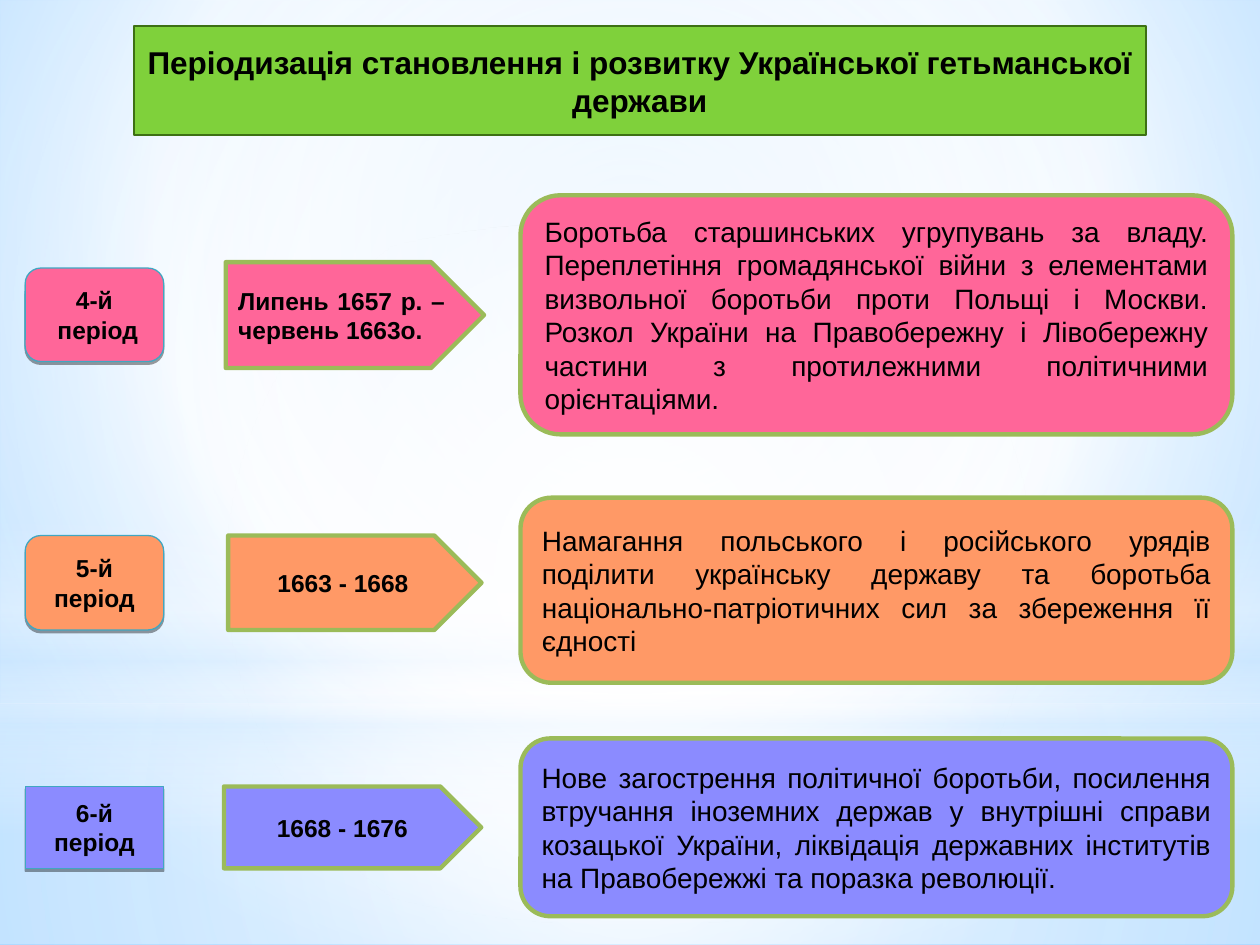
from dataclasses import dataclass
from typing import Optional

from lxml.etree import SubElement
from pptx import Presentation
from pptx.dml.color import RGBColor
from pptx.enum.shapes import MSO_SHAPE
from pptx.enum.text import MSO_ANCHOR, PP_ALIGN
from pptx.oxml import parse_xml
from pptx.oxml.ns import qn
from pptx.util import Pt

NAMESPACE = "http://schemas.openxmlformats.org/drawingml/2006/main"
BASE_FONT = {"name": "Arial", "bold": True}
GREEN_EDGE = "9BBB59"
TEAL_EDGE = "40A7C2"


@dataclass
class Frame:
    left: float
    top: float
    width: float
    height: float


@dataclass
class Wash:
    kind: MSO_SHAPE
    frame: Frame
    stops: list  # (position, colour, opacity) in percent
    radial: bool = True


@dataclass
class Period:
    colour: str
    label: str
    dates: str
    summary: str
    label_frame: Frame
    dates_frame: Frame
    summary_frame: Frame
    label_corner: float = 0.167
    dates_align: PP_ALIGN = PP_ALIGN.CENTER


WASHES = [
    Wash(MSO_SHAPE.RECTANGLE, Frame(0, 402, 720, 138),
         [(0, "FFFFFF", 91), (37, "FFFFFF", 76), (100, "D6ECFF", 79)]),
    Wash(MSO_SHAPE.RECTANGLE, Frame(0, 0, 720, 402),
         [(0, "FFFFFF", 89), (48, "FFFFFF", 62), (100, "D6ECFF", 79)]),
    Wash(MSO_SHAPE.RECTANGLE, Frame(0, 296.6, 720, 180),
         [(0, "FFFFFF", 0), (29, "FFFFFF", 30), (45, "D6ECFF", 40),
          (55, "FFFFFF", 26), (65, "D6ECFF", 60), (100, "FFFFFF", 0)], radial=False),
    Wash(MSO_SHAPE.OVAL, Frame(0, 126, 720, 402),
         [(0, "FFFFFF", 100), (56, "FFFFFF", 0)]),
]

PERIODS = [
    Period("FF6699", "4-й\n період", "Липень 1657 р. – червень 1663о.",
           "Боротьба старшинських угрупувань за владу. Переплетіння громадянської "
           "війни з елементами визвольної боротьби проти Польщі і Москви. Розкол "
           "України на Правобережну і Лівобережну частини з протилежними "
           "політичними орієнтаціями.",
           Frame(14.4, 153.2, 79.2, 53.4), Frame(129, 149.8, 147.6, 60.5),
           Frame(297.4, 111.6, 406.8, 136.6), dates_align=PP_ALIGN.JUSTIFY),
    Period("FF9966", "5-й період", "1663 - 1668",
           "Намагання польського і російського урядів поділити українську державу "
           "та боротьба національно-патріотичних сил за збереження її єдності",
           Frame(14.4, 306, 79.2, 54), Frame(130.4, 306, 144.8, 54),
           Frame(297.4, 284.4, 406.8, 105.8)),
    Period("8B8BFF", "6-й період", "1668 - 1676",
           "Нове загострення політичної боротьби, посилення втручання іноземних "
           "держав у внутрішні справи козацької України, ліквідація державних "
           "інститутів на Правобережжі та поразка революції.",
           Frame(14.4, 449.4, 79.2, 46.8), Frame(128, 449.4, 147, 46.8),
           Frame(297.4, 422, 406.8, 101.6), label_corner=0),
]


def rgb(colour: str) -> RGBColor:
    return RGBColor.from_string(colour)


def place(shape, frame: Frame) -> None:
    for side in ("left", "top", "width", "height"):
        setattr(shape, side, Pt(getattr(frame, side)))


def gradient(stops: list, focus: Optional[tuple]):
    """Radial gradient around the focus rectangle, or a vertical one without it."""
    fill = parse_xml(f'<a:gradFill xmlns:a="{NAMESPACE}" rotWithShape="1"/>')
    stop_list = SubElement(fill, qn("a:gsLst"))
    for position, colour, opacity in stops:
        stop = SubElement(stop_list, qn("a:gs"), pos=str(position * 1000))
        tint = SubElement(stop, qn("a:srgbClr"), val=colour)
        if opacity < 100:
            SubElement(tint, qn("a:alpha"), val=str(opacity * 1000))
    if focus:
        shade = SubElement(fill, qn("a:path"), {"path": "circle"})
        edges = {side: str(inset * 1000) for side, inset in zip("ltrb", focus)}
        SubElement(shade, qn("a:fillToRect"), edges)
    else:
        SubElement(fill, qn("a:lin"), ang="5400000", scaled="0")
    return fill


def draw_wash(page, wash: Wash) -> None:
    shape = page.shapes.add_shape(wash.kind, 0, 0, 0, 0)
    place(shape, wash.frame)
    shape.shadow.inherit = False
    shape.line.fill.background()
    shape.fill.background()
    properties = shape._element.spPr
    focus = (50, 50, 50, 50) if wash.radial else None
    properties.replace(properties.find(qn("a:noFill")), gradient(wash.stops, focus))


def paint(shape, fill: str, edge: str, weight: float) -> None:
    shape.fill.solid()
    shape.fill.fore_color.rgb = rgb(fill)
    shape.line.color.rgb = rgb(edge)
    shape.line.width = Pt(weight)


def write(shape, text: str, size: float, align: PP_ALIGN, **extra) -> None:
    frame = shape.text_frame
    frame.word_wrap = True
    frame.vertical_anchor = MSO_ANCHOR.MIDDLE
    frame.text = text
    font_format = {**BASE_FONT, "size": Pt(size), **extra}
    for para in frame.paragraphs:
        para.alignment = align
        for span in para.runs:
            for name, value in font_format.items():
                setattr(span.font, name, value)
            span.font.color.rgb = rgb("000000")


def add_box(page, kind: MSO_SHAPE, frame: Frame, corner: float,
            fill: str, edge: str, weight: float):
    box = page.shapes.add_shape(kind, 0, 0, 0, 0)
    place(box, frame)
    box.adjustments[0] = corner
    box.shadow.inherit = False
    paint(box, fill, edge, weight)
    return box


def add_drop_shadow(box) -> None:
    effects = box._element.spPr.find(qn("a:effectLst"))
    shadow = SubElement(effects, qn("a:outerShdw"), blurRad="0", dist=str(Pt(1.6)),
                        dir="5400000", rotWithShape="0")
    colour = SubElement(shadow, qn("a:srgbClr"), val="000000")
    SubElement(colour, qn("a:alpha"), val="38000")


def draw_period(page, period: Period) -> None:
    label = add_box(page, MSO_SHAPE.ROUNDED_RECTANGLE, period.label_frame,
                    period.label_corner, period.colour, TEAL_EDGE, 0.75)
    add_drop_shadow(label)
    write(label, period.label, 14, PP_ALIGN.CENTER)

    dates = add_box(page, MSO_SHAPE.PENTAGON, period.dates_frame, 0.5,
                    period.colour, GREEN_EDGE, 2.5)
    write(dates, period.dates, 14, period.dates_align)

    summary = add_box(page, MSO_SHAPE.ROUNDED_RECTANGLE, period.summary_frame, 0.167,
                      period.colour, GREEN_EDGE, 2.5)
    write(summary, period.summary, 16, PP_ALIGN.JUSTIFY, bold=False)


def main() -> None:
    deck = Presentation()
    deck.slide_width, deck.slide_height = Pt(720), Pt(540)
    page = deck.slides.add_slide(deck.slide_layouts[5])

    # Background gradient and the soft washes over it
    page.background.fill.solid()
    solid = next(page._element.iter(qn("a:solidFill")))
    sky = [(0, "C2E3FF", 100), (60, "FFFFFF", 100), (100, "79C1FF", 100)]
    solid.getparent().replace(solid, gradient(sky, (20, 10, 20, 60)))
    for wash in WASHES:
        draw_wash(page, wash)

    # Title, brought in front of the washes
    title = page.shapes.title
    page.shapes._spTree.append(title._element)
    place(title, Frame(76.4, 15, 578.4, 62.4))
    paint(title, "7FD13B", "3D7014", 1.25)
    write(title, "Періодизація становлення і розвитку Української гетьманської держави",
          18, PP_ALIGN.CENTER)

    # One row per period
    for period in PERIODS:
        draw_period(page, period)

    deck.save("out.pptx")


if __name__ == "__main__":
    main()
